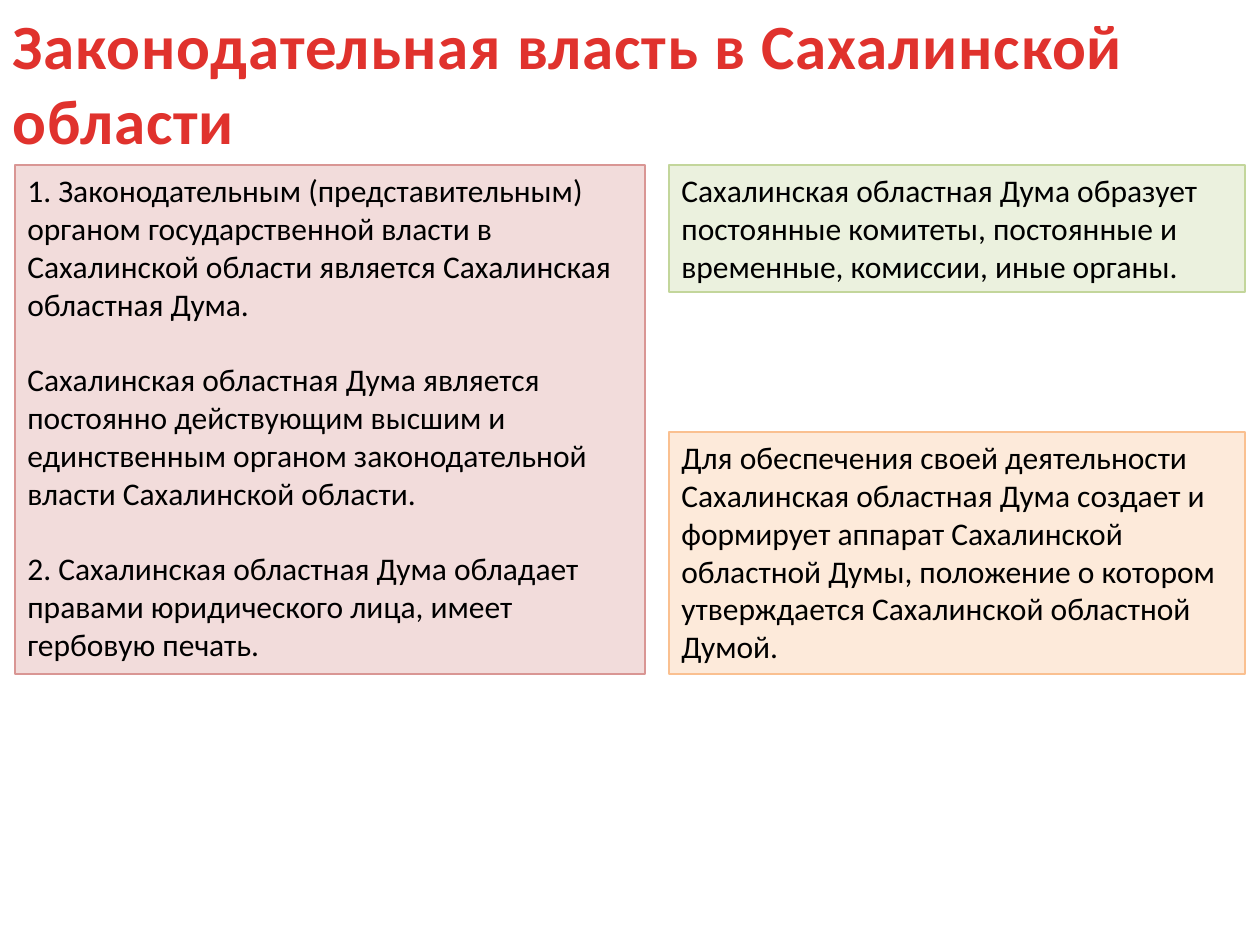
from pptx import Presentation
from pptx.dml.color import RGBColor
from pptx.enum.shapes import MSO_SHAPE
from pptx.enum.text import MSO_ANCHOR, MSO_AUTO_SIZE, PP_ALIGN
from pptx.util import Emu, Pt

RECTANGLE = MSO_SHAPE.RECTANGLE
TOP = MSO_ANCHOR.TOP
LEFT = PP_ALIGN.LEFT
GROW = MSO_AUTO_SIZE.SHAPE_TO_FIT_TEXT

EMU_PER_PX = 914400 / 126
FONT = "Calibri"
BLACK = RGBColor(0x00, 0x00, 0x00)
RED = RGBColor(0xE0, 0x32, 0x2D)
DARK_RED = RGBColor(0xA2, 0x20, 0x1C)
PINK = RGBColor(0xF2, 0xDC, 0xDB)
PINK_EDGE = RGBColor(0xD9, 0x96, 0x94)
GREEN = RGBColor(0xEB, 0xF1, 0xDE)
GREEN_EDGE = RGBColor(0xC3, 0xD6, 0x9B)
ORANGE = RGBColor(0xFD, 0xEA, 0xDA)
ORANGE_EDGE = RGBColor(0xFA, 0xC0, 0x90)

TITLE = "Законодательная власть в Сахалинской области"
STATUS = [
    "1. Законодательным (представительным) органом государственной власти в "
    "Сахалинской области является Сахалинская областная Дума.",
    "Сахалинская областная Дума является постоянно действующим высшим и "
    "единственным органом законодательной власти Сахалинской области.",
    "2. Сахалинская областная Дума обладает правами юридического лица, имеет "
    "гербовую печать.",
]
COMMITTEES = [
    "Сахалинская областная Дума образует постоянные комитеты, постоянные и "
    "временные, комиссии, иные органы.",
]
STAFF = [
    "Для обеспечения своей деятельности Сахалинская областная Дума создает и "
    "формирует аппарат Сахалинской областной Думы, положение о котором "
    "утверждается Сахалинской областной Думой.",
]


def px(*lengths):
    return [Emu(round(length * EMU_PER_PX)) for length in lengths]


def set_up_frame(frame):
    frame.word_wrap = True
    frame.auto_size = GROW
    frame.vertical_anchor = TOP


def add_title(slide, text, box):
    frame = slide.shapes.add_textbox(*px(*box)).text_frame
    set_up_frame(frame)
    frame.text = text
    run = frame.paragraphs[0].runs[0]
    font = run.font
    font.name, font.size, font.bold = FONT, Pt(36), True
    font.fill.gradient()
    font.fill.gradient_angle = 270
    stops = font.fill.gradient_stops
    for stop, position, color in zip(stops, (0.25, 1), (RED, DARK_RED)):
        stop.position = position
        stop.color.rgb = color
    run._r.get_or_add_rPr().set("spc", "50")


def add_panel(slide, texts, box, fill, edge):
    panel = slide.shapes.add_shape(RECTANGLE, *px(*box))
    panel.shadow.inherit = False
    panel.fill.solid()
    panel.fill.fore_color.rgb = fill
    panel.line.color.rgb = edge
    panel.line.width = Pt(0.75)
    frame = panel.text_frame
    set_up_frame(frame)
    frame.text = "\n".join(texts)
    for index, paragraph in enumerate(frame.paragraphs):
        paragraph.alignment = LEFT
        if index:
            paragraph.space_before = Pt(21.6)
        for run in paragraph.runs:
            run.font.name, run.font.size = FONT, Pt(18)
            run.font.color.rgb = BLACK


def main():
    """Build the slide about the legislature of the Sakhalin region."""
    deck = Presentation()
    deck.slide_width, deck.slide_height = px(1260, 945)
    slide = deck.slides.add_slide(deck.slide_layouts[6])
    add_title(slide, TITLE, (0, 0, 1260, 165))
    add_panel(slide, STATUS, (15, 165, 630, 509), PINK, PINK_EDGE)
    add_panel(slide, COMMITTEES, (669, 165, 576, 127), GREEN, GREEN_EDGE)
    add_panel(slide, STAFF, (669, 432, 576, 242), ORANGE, ORANGE_EDGE)
    deck.save("out.pptx")


if __name__ == "__main__":
    main()
